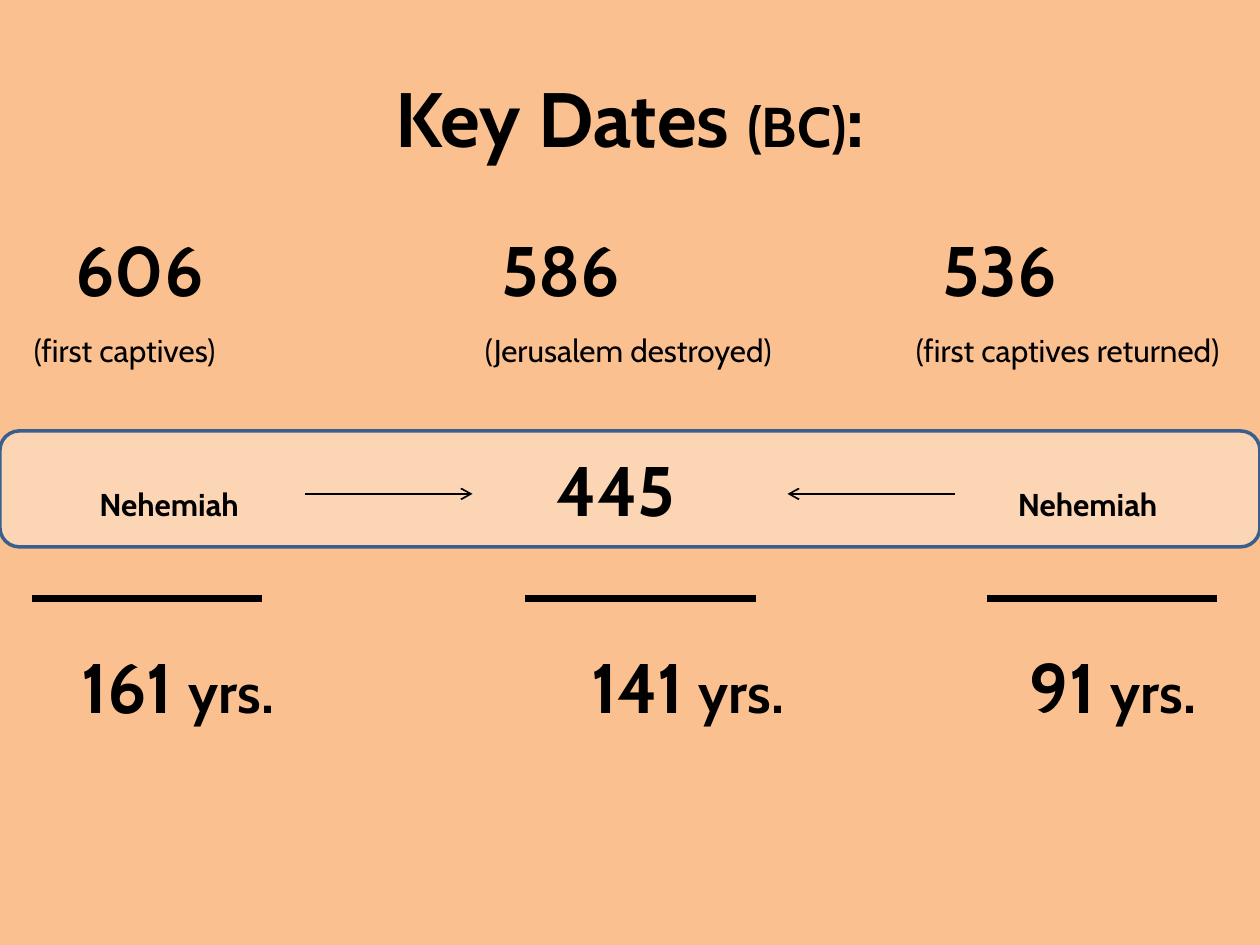
from dataclasses import dataclass

from pptx import Presentation
from pptx.dml.color import RGBColor
from pptx.enum.shapes import MSO_CONNECTOR, MSO_SHAPE
from pptx.enum.text import MSO_ANCHOR, MSO_AUTO_SIZE, PP_ALIGN
from pptx.oxml.ns import qn
from pptx.util import Inches, Pt
from lxml.etree import SubElement


@dataclass(frozen=True)
class Theme:
    """Colours, typeface and type sizes of the slide."""
    font: str = "Cabin"
    ink: RGBColor = RGBColor(0x00, 0x00, 0x00)
    background: RGBColor = RGBColor(0xFA, 0xC0, 0x90)
    band: RGBColor = RGBColor(0xFC, 0xD5, 0xB5)
    band_line: RGBColor = RGBColor(0x3A, 0x5F, 0x8C)
    title: int = 44
    date: int = 40
    unit: int = 32
    label: int = 18


THEME = Theme()


def write(para, pieces, align, bold=True):
    """Fill a paragraph with pieces of text, each with its own size."""
    para.alignment = align
    for text, size in pieces:
        span = para.add_run()
        span.text = text
        span.font.name = THEME.font
        span.font.size = Pt(size)
        span.font.bold = bold
        span.font.color.rgb = THEME.ink


def place(shape, box):
    """Move a shape to a box of left, top, width and height in inches."""
    shape.left, shape.top, shape.width, shape.height = map(Inches, box)


def add_line(page, start, end, weight, arrow=False):
    """Draw a straight line, with an open arrowhead at its end if asked."""
    line = page.shapes.add_connector(
        MSO_CONNECTOR.STRAIGHT, *map(Inches, (*start, *end)))
    line.line.color.rgb = THEME.ink
    line.line.width = Pt(weight)
    if arrow:
        SubElement(line.line._get_or_add_ln(), qn("a:tailEnd"), type="arrow")
    SubElement(line._element.spPr, qn("a:effectLst"))


def add_text(page, box, pieces, align, bold=True):
    """Add a wrapping text box that grows with its text."""
    frame = page.shapes.add_textbox(*map(Inches, box)).text_frame
    frame.word_wrap = True
    frame.auto_size = MSO_AUTO_SIZE.SHAPE_TO_FIT_TEXT
    para = frame.paragraphs[0]
    write(para, pieces, align, bold)
    return para


def fill_title(page, box):
    """Set the heading in the title placeholder."""
    title = page.shapes.title
    place(title, box)
    title.text_frame.vertical_anchor = MSO_ANCHOR.MIDDLE
    pieces = [("Key Dates ", THEME.title), ("(BC)", THEME.unit), (":", THEME.title)]
    write(title.text_frame.paragraphs[0], pieces, PP_ALIGN.CENTER)


def fill_dates(page, top):
    """Set the first date in the body placeholder and the others beside it."""
    body = page.placeholders[1]
    place(body, (0.5, top, 1.4, 0.83))
    first = body.text_frame.paragraphs[0]
    write(first, [("606", THEME.date)], PP_ALIGN.LEFT)
    properties = first._p.get_or_add_pPr()
    properties.set("marL", "0")
    properties.set("indent", "0")
    SubElement(properties, qn("a:buNone"))
    others = [add_text(page, (left, top, 1.4, 0.83), [(date, THEME.date)], PP_ALIGN.LEFT)
              for left, date in ((3.88, "586"), (7.38, "536"))]
    for para in (first, *others):
        para.space_before = Pt(8)


def add_band(page, box):
    """Draw the Nehemiah band with arrows pointing at its date."""
    left, top, width, height = box
    band = page.shapes.add_shape(MSO_SHAPE.ROUNDED_RECTANGLE, *map(Inches, box))
    band.shadow.inherit = False
    band.fill.solid()
    band.fill.fore_color.rgb = THEME.band
    band.line.color.rgb = THEME.band_line
    band.line.width = Pt(2)
    frame = band.text_frame
    frame.vertical_anchor = MSO_ANCHOR.MIDDLE
    frame.margin_right = Inches(0.32)
    write(frame.paragraphs[0], [("445", THEME.date)], PP_ALIGN.CENTER)
    for offset in (0.69, 7.98):
        add_text(page, (left + offset, top + 0.38, 1.4, 0.4),
                 [("Nehemiah", THEME.label)], PP_ALIGN.LEFT)
    middle = top + 0.5
    for tail, head in ((2.42, 3.75), (width - 2.42, width - 3.75)):
        add_line(page, (left + tail, middle), (left + head, middle), 1, arrow=True)


def add_captions(page, top):
    """Explain each date below it."""
    captions = [(0.17, 2.08, "(first captives)"),
                (3.75, 2.92, "(Jerusalem destroyed)"),
                (7.17, 2.83, "(first captives returned)")]
    for left, width, text in captions:
        add_text(page, (left, top, width, 0.4), [(text, THEME.label)],
                 PP_ALIGN.LEFT, bold=False)


def add_spans(page, top):
    """Rule off each column and give its number of years."""
    columns = [(0.25, 0.25, 2.33, "161 "),
               (4.17, 4.25, 2.42, "141 "),
               (7.83, 7.92, 1.83, "91 ")]
    for rule, left, width, years in columns:
        add_line(page, (rule, top), (rule + 1.83, top), 3.5)
        add_text(page, (left, top + 0.31, width, 0.77),
                 [(years, THEME.date), ("yrs.", THEME.unit)], PP_ALIGN.CENTER)


def main():
    """Build and save the deck."""
    deck = Presentation()
    deck.slide_width, deck.slide_height = Inches(10), Inches(7.5)
    page = deck.slides.add_slide(deck.slide_layouts[1])
    page.background.fill.solid()
    page.background.fill.fore_color.rgb = THEME.background
    fill_title(page, (0.5, 0.3, 9, 1.25))
    fill_dates(page, 1.75)
    add_band(page, (0, 3.42, 10, 0.92))
    add_spans(page, 4.75)
    add_captions(page, 2.58)
    deck.save("out.pptx")


if __name__ == "__main__":
    main()
